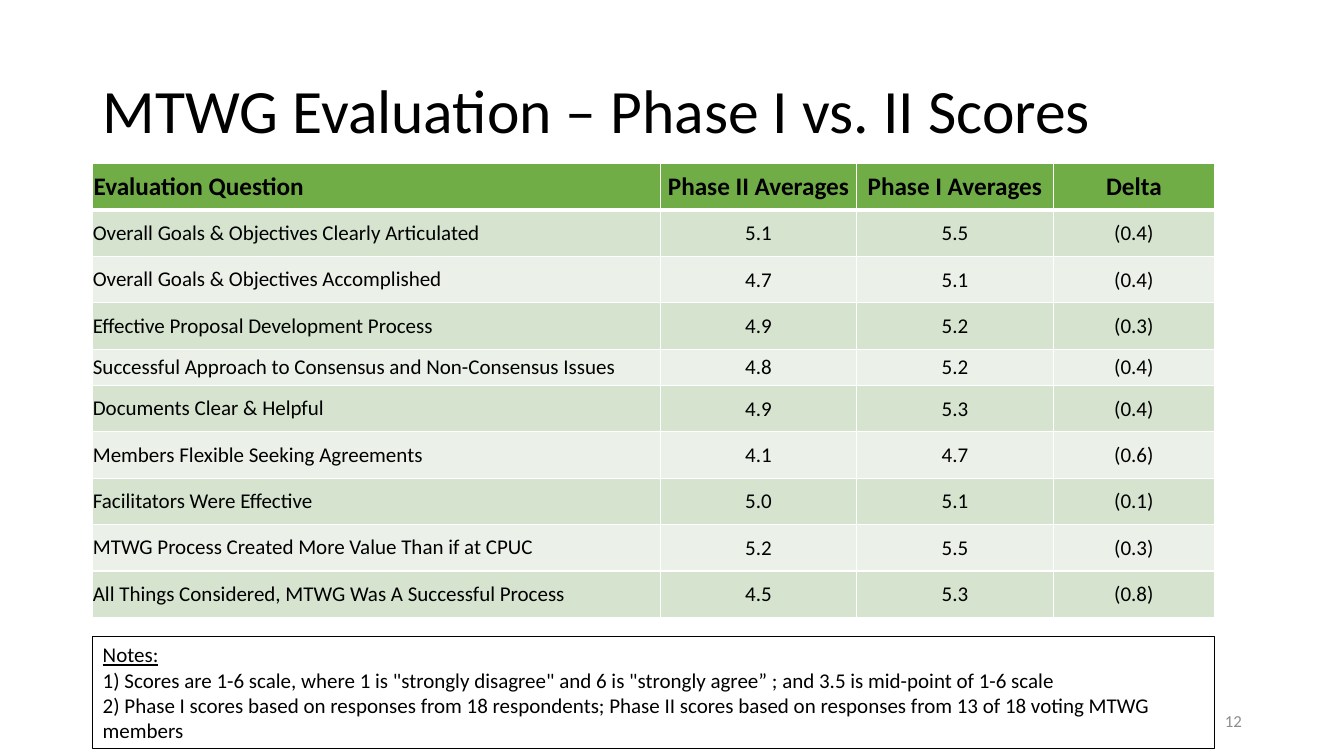
from dataclasses import dataclass

from lxml.etree import SubElement
from pptx import Presentation
from pptx.dml.color import RGBColor
from pptx.enum.shapes import MSO_SHAPE
from pptx.enum.text import MSO_ANCHOR, PP_ALIGN
from pptx.oxml.ns import qn
from pptx.slide import Slide
from pptx.table import _Cell
from pptx.text.text import TextFrame
from pptx.util import Cm, Pt

COLORS = {
    "text": "000000",
    "page_number": "8C8C8C",
    "header": "70AD47",
    "odd_row": "D5E3CF",
    "even_row": "EBF1E9",
    "border": "FFFFFF",
    "notes_line": "000000",
}
FONT = "Calibri"
LEFT = Cm(2.34)
COLUMN_WIDTHS = (14.3, 4.95, 4.95, 4.07)
ROW_HEIGHT, LONG_QUESTION_HEIGHT = Cm(1.17), Cm(0.91)
HEADINGS = ("Evaluation Question", "Phase II Averages", "Phase I Averages", "Delta")


@dataclass(frozen=True)
class Score:
    question: str
    phase_two: float
    phase_one: float
    height: int = ROW_HEIGHT

    def texts(self) -> tuple[str, ...]:
        """Cell texts of the row; a drop is shown in parentheses."""
        drop = self.phase_one - self.phase_two
        return self.question, f"{self.phase_two:.1f}", f"{self.phase_one:.1f}", f"({drop:.1f})"


SCORES = (
    Score("Overall Goals & Objectives Clearly Articulated", 5.1, 5.5),
    Score("Overall Goals & Objectives Accomplished", 4.7, 5.1),
    Score("Effective Proposal Development Process", 4.9, 5.2),
    Score("Successful Approach to Consensus and Non-Consensus Issues", 4.8, 5.2,
          LONG_QUESTION_HEIGHT),
    Score("Documents Clear & Helpful", 4.9, 5.3),
    Score("Members Flexible Seeking Agreements", 4.1, 4.7),
    Score("Facilitators Were Effective", 5.0, 5.1),
    Score("MTWG Process Created More Value Than if at CPUC", 5.2, 5.5),
    Score("All Things Considered, MTWG Was A Successful Process", 4.5, 5.3),
)
NOTES = (
    "Notes:",
    '1) Scores are 1-6 scale, where 1 is "strongly disagree" and 6 is "strongly agree” ; '
    "and 3.5 is mid-point of 1-6 scale",
    "2) Phase I scores based on responses from 18 respondents; Phase II scores based on "
    "responses from 13 of 18 voting MTWG members",
)


def write_text(frame: TextFrame, text: str, *, size: float, color: str = "text",
               bold: bool = False, underline: bool = False,
               align: PP_ALIGN = PP_ALIGN.LEFT, line_spacing: float = 1.0,
               new_paragraph: bool = False) -> None:
    paragraph = frame.add_paragraph() if new_paragraph else frame.paragraphs[0]
    paragraph.alignment = align
    paragraph.line_spacing = line_spacing
    run = paragraph.add_run()
    run.text = text
    run.font.name = FONT
    run.font.size = Pt(size)
    run.font.bold = bold
    run.font.underline = underline
    run.font.color.rgb = RGBColor.from_string(COLORS[color])


def add_borders(cell: _Cell, top: float, bottom: float) -> None:
    """Set white borders, widths in points; must precede the cell's fill."""
    properties = cell._tc.get_or_add_tcPr()
    for side, width in (("L", 1), ("R", 1), ("T", top), ("B", bottom)):
        line = SubElement(properties, qn(f"a:ln{side}"), w=str(Pt(width)))
        fill = SubElement(line, qn("a:solidFill"))
        SubElement(fill, qn("a:srgbClr"), val=COLORS["border"])


def add_title(slide: Slide) -> None:
    title = slide.shapes.title
    title.left, title.top, title.width, title.height = LEFT, Cm(1.02), Cm(29.21), Cm(3.68)
    title.text_frame.vertical_anchor = MSO_ANCHOR.MIDDLE
    write_text(title.text_frame, "MTWG Evaluation – Phase I vs. II Scores",
               size=44, line_spacing=0.9)


def add_score_table(slide: Slide) -> None:
    heights = [ROW_HEIGHT] + [score.height for score in SCORES]
    table = slide.shapes.add_table(len(heights), len(HEADINGS), LEFT, Cm(4.12),
                                   Cm(sum(COLUMN_WIDTHS)), sum(heights)).table
    for column, width in zip(table.columns, COLUMN_WIDTHS):
        column.width = Cm(width)
    rows = [HEADINGS] + [score.texts() for score in SCORES]
    for row_index, (texts, height) in enumerate(zip(rows, heights)):
        table.rows[row_index].height = height
        is_header = row_index == 0
        fill = "header" if is_header else "odd_row" if row_index % 2 else "even_row"
        for column_index, text in enumerate(texts):
            cell = table.cell(row_index, column_index)
            inset = Cm(0.02) if is_header or column_index else 0
            cell.margin_left = cell.margin_right = cell.margin_top = inset
            cell.margin_bottom = 0
            cell.vertical_anchor = MSO_ANCHOR.MIDDLE
            add_borders(cell, top=3 if row_index == 1 else 1, bottom=3 if is_header else 1)
            cell.fill.solid()
            cell.fill.fore_color.rgb = RGBColor.from_string(COLORS[fill])
            write_text(cell.text_frame, text, size=18 if is_header else 15, bold=is_header,
                       align=PP_ALIGN.CENTER if column_index else PP_ALIGN.LEFT)


def add_page_number(slide: Slide) -> None:
    frame = slide.shapes.add_textbox(Cm(23.93), Cm(17.65), Cm(7.62), Cm(1.02)).text_frame
    frame.word_wrap = True
    frame.vertical_anchor = MSO_ANCHOR.MIDDLE
    write_text(frame, "12", size=12, color="page_number", align=PP_ALIGN.RIGHT)


def add_notes_box(slide: Slide) -> None:
    box = slide.shapes.add_shape(MSO_SHAPE.RECTANGLE, LEFT, Cm(16.05),
                                 Cm(sum(COLUMN_WIDTHS)), Cm(2.82))
    box.shadow.inherit = False
    box.fill.background()
    box.line.color.rgb = RGBColor.from_string(COLORS["notes_line"])
    box.line.width = Pt(0.75)
    frame = box.text_frame
    frame.word_wrap = True
    frame.vertical_anchor = MSO_ANCHOR.TOP
    for index, note in enumerate(NOTES):
        write_text(frame, note, size=15, underline=index == 0, new_paragraph=index > 0)


def main() -> None:
    presentation = Presentation()
    presentation.slide_width, presentation.slide_height = Cm(33.87), Cm(19.05)
    title_only_layout = presentation.slide_layouts[5]
    slide = presentation.slides.add_slide(title_only_layout)
    add_title(slide)
    add_score_table(slide)
    add_page_number(slide)
    add_notes_box(slide)
    presentation.save("out.pptx")


if __name__ == "__main__":
    main()
